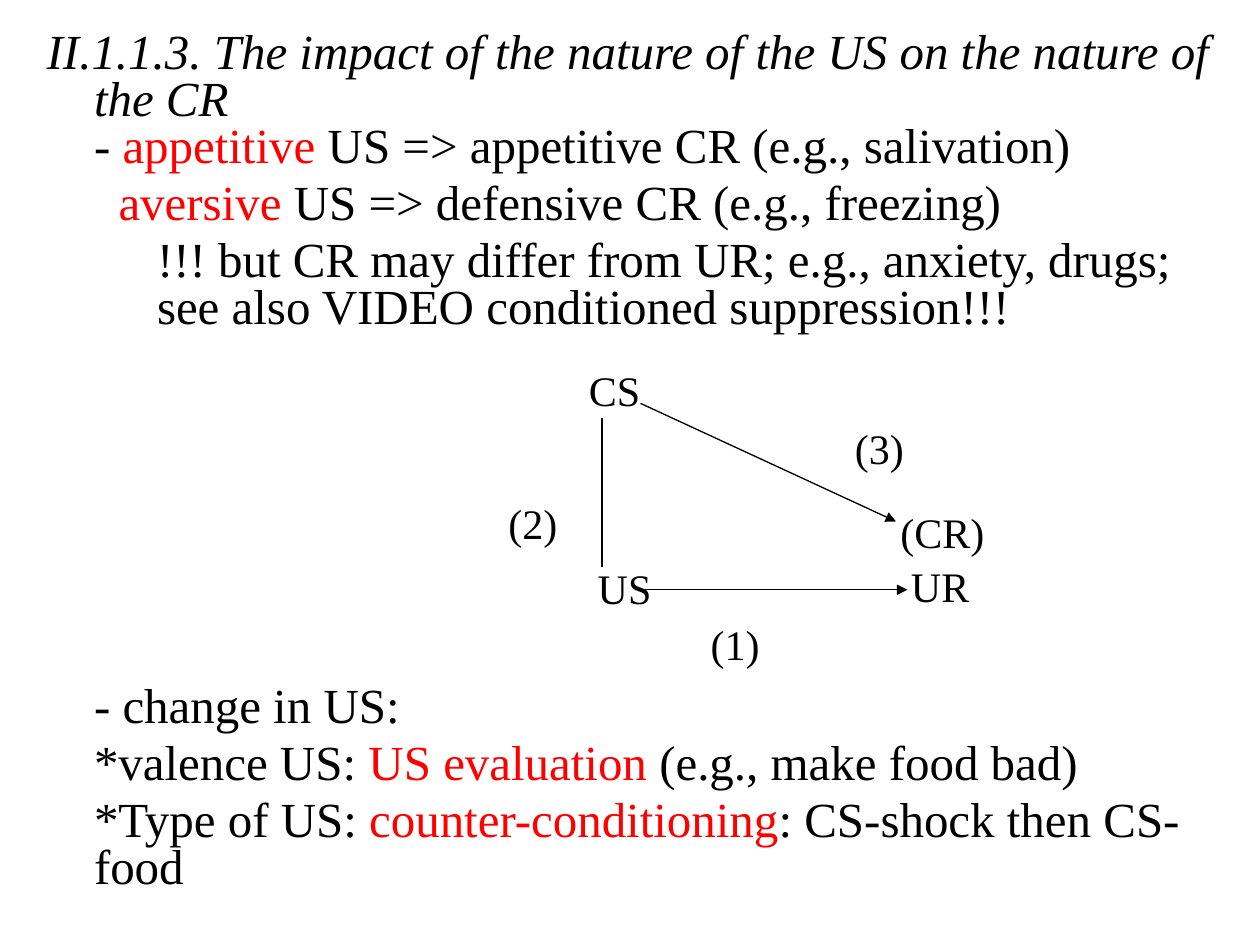
import pptx
import pptx.dml.color
import pptx.enum.shapes
import pptx.enum.text
import pptx.oxml.ns
import pptx.util
from lxml import etree

Pt = pptx.util.Pt
BLACK = pptx.dml.color.RGBColor(0, 0, 0)
RED = pptx.dml.color.RGBColor(255, 0, 0)
FONT = "Times New Roman"
BODY_INDENT = 27
PARAGRAPH_GAP = 5.6
DIAGRAM_GAP = 201

# Each entry: left margin, first-line indent, space before, (text, colour, italic) runs
OUTLINE = [
    (BODY_INDENT, -BODY_INDENT, 0, [
        ("II.1.1.3. The impact of the nature of the US on the nature of the CR \v", BLACK, True),
        ("- ", BLACK, False),
        ("appetitive ", RED, False),
        ("US => appetitive CR (e.g., salivation)", BLACK, False)]),
    (BODY_INDENT, 14, PARAGRAPH_GAP, [
        ("aversive ", RED, False),
        ("US => defensive CR (e.g., freezing)", BLACK, False)]),
    (63, 0, PARAGRAPH_GAP, [
        ("!!! but CR may differ from UR; e.g., anxiety, drugs; "
         "see also VIDEO conditioned suppression!!!", BLACK, False)]),
    (BODY_INDENT, 0, DIAGRAM_GAP, [("- change in US:", BLACK, False)]),
    (BODY_INDENT, 0, PARAGRAPH_GAP, [
        ("*valence US: ", BLACK, False),
        ("US evaluation ", RED, False),
        ("(e.g., make food bad)", BLACK, False)]),
    (BODY_INDENT, 0, PARAGRAPH_GAP, [
        ("*Type of US: ", BLACK, False),
        ("counter-conditioning", RED, False),
        (": CS-shock then CS-food", BLACK, False)]),
]

# Each entry: text, left, top
DIAGRAM_LABELS = [
    ("CS", 329.5, 205),
    ("US", 334.5, 318),
    ("UR", 513.5, 317),
    ("(CR)", 507.5, 286),
    ("(2)", 283.5, 281),
    ("(3)", 481.5, 238),
    ("(1)", 399, 350),
]

# Each entry: start, end, whether it ends in an arrowhead
DIAGRAM_LINES = [
    ((366, 230.5), (512, 298), True),
    ((344, 239), (344, 324), False),
    ((368.5, 337), (518.5, 337), True),
]


def format_font(font, size, color, italic=False):
    font.name = FONT
    font.size = Pt(size)
    font.color.rgb = color
    font.italic = italic


def add_runs(paragraph, pieces):
    """Add coloured runs; a trailing vertical tab becomes a line break."""
    for text, color, italic in pieces:
        run = paragraph.add_run()
        run.text = text.rstrip("\v")
        format_font(run.font, 28, color, italic)
        if text.endswith("\v"):
            paragraph.add_line_break()


def set_indent(paragraph, margin, first_line):
    """Set the indents and switch off the template's bullet."""
    properties = paragraph._p.get_or_add_pPr()
    properties.set("marL", str(Pt(margin)))
    properties.set("indent", str(Pt(first_line)))
    etree.SubElement(properties, pptx.oxml.ns.qn("a:buNone"))


def fill_outline(body):
    body.left, body.top, body.width, body.height = Pt(19.5), Pt(14.5), Pt(689), Pt(514)
    frame = body.text_frame
    frame.auto_size = pptx.enum.text.MSO_AUTO_SIZE.NONE
    frame.vertical_anchor = pptx.enum.text.MSO_ANCHOR.TOP
    for index, (margin, first_line, gap, pieces) in enumerate(OUTLINE):
        paragraph = frame.add_paragraph() if index else frame.paragraphs[0]
        paragraph.line_spacing = 0.8
        paragraph.space_before = Pt(gap)
        set_indent(paragraph, margin, first_line)
        add_runs(paragraph, pieces)


def add_label(slide, text, left, top):
    label = slide.shapes.add_textbox(Pt(left), Pt(top), Pt(72), Pt(36))
    label.text_frame.word_wrap = True
    label.text_frame.text = text
    format_font(label.text_frame.paragraphs[0].runs[0].font, 24, BLACK)


def add_line(slide, start, end, has_arrow):
    line = slide.shapes.add_connector(
        pptx.enum.shapes.MSO_CONNECTOR.STRAIGHT, *map(Pt, start + end))
    line.line.color.rgb = BLACK
    line.line.width = Pt(0.75)
    if has_arrow:
        etree.SubElement(line.line._get_or_add_ln(),
                         pptx.oxml.ns.qn("a:tailEnd"), type="triangle")
    etree.SubElement(line._element.spPr, pptx.oxml.ns.qn("a:effectLst"))


def main():
    presentation = pptx.Presentation()
    presentation.slide_width, presentation.slide_height = Pt(720), Pt(540)
    slide = presentation.slides.add_slide(presentation.slide_layouts[1])
    title = slide.shapes.title._element
    title.getparent().remove(title)
    fill_outline(slide.placeholders[1])
    for text, left, top in DIAGRAM_LABELS:
        add_label(slide, text, left, top)
    for start, end, has_arrow in DIAGRAM_LINES:
        add_line(slide, start, end, has_arrow)
    presentation.save("out.pptx")


if __name__ == "__main__":
    main()
